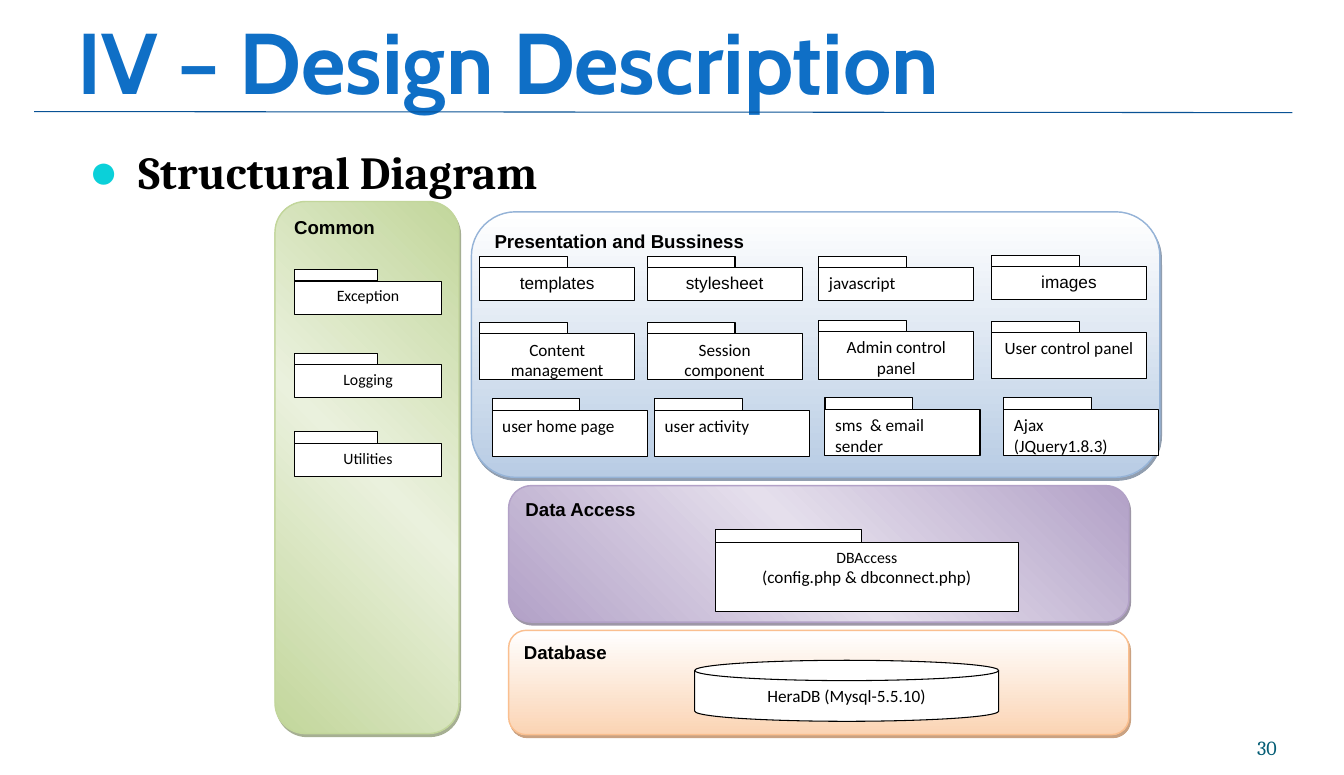
from pptx import Presentation
from pptx import util as u
from pptx.dml.color import RGBColor
from pptx.enum import shapes, text
from pptx.oxml import parse_xml
from pptx.oxml.ns import qn, nsdecls

PX = 9144
HUES = {
    "white": "FFFFFF", "black": "000000", "title": "0F6FC6", "rule": "095295",
    "dot": "0BD0D9", "page": "045D75",
}
SKINS = {
    "base": {"stops": ["FFFFFF", "FBD4B4"], "angle": 270, "edge": "FABF8F", "shade": "974706"},
    "data": {"stops": ["B2A1C7", "E5DFEC", "B2A1C7"], "angle": 45, "edge": "B2A1C7", "shade": "3F3151"},
    "common": {"stops": ["C2D69B", "EAF1DD", "C2D69B"], "angle": 45, "edge": "C2D69B", "shade": "4E6128"},
    "front": {"stops": ["FFFFFF", "B8CCE4"], "angle": 270, "edge": "95B3D7", "shade": "243F60"},
}
KINDS = shapes.MSO_SHAPE
LEFT, MID, RIGHT = text.PP_ALIGN.LEFT, text.PP_ALIGN.CENTER, text.PP_ALIGN.RIGHT
TOP, LOW = text.MSO_ANCHOR.TOP, text.MSO_ANCHOR.BOTTOM


def rgb(code):
    """Turn a hex string into a colour."""
    return RGBColor.from_string(code)


def apply(item, look):
    """Set each attribute in a dict of format values."""
    for key, value in look.items():
        setattr(item, key, value)


def write(shape, lines, font, size, hue="black", bold=False, align=LEFT, anchor=TOP, pads=(10, 5, 10, 5)):
    """Fill a shape with lines of text; a line is a string or a (string, size) pair."""
    frame = shape.text_frame
    sides = ("margin_left", "margin_top", "margin_right", "margin_bottom")
    apply(frame, {"word_wrap": True, "vertical_anchor": anchor,
                  **{side: pad * PX for side, pad in zip(sides, pads)}})
    for i, line in enumerate(lines):
        words, points = line if isinstance(line, tuple) else (line, size)
        para = frame.add_paragraph() if i else frame.paragraphs[0]
        para.alignment = align
        run = para.add_run()
        run.text = words
        apply(run.font, {"name": font, "size": u.Pt(points), "bold": bold})
        run.font.color.rgb = rgb(HUES[hue])
    return frame


def label(slide, box, lines, *style, **look):
    """Add a text box."""
    return write(slide.shapes.add_textbox(*(n * PX for n in box)), lines, *style, **look)


def block(slide, kind, box, edge="000000", width=0.75):
    """Add a white shape with a thin outline."""
    shape = slide.shapes.add_shape(kind, *(n * PX for n in box))
    shape.shadow.inherit = False
    shape.fill.solid()
    shape.fill.fore_color.rgb = rgb(HUES["white"])
    shape.line.color.rgb = rgb(edge)
    shape.line.width = u.Pt(width)
    return shape


def panel(slide, box, name, skin):
    """Add a rounded, shaded panel with its heading."""
    look = SKINS[skin]
    shape = block(slide, KINDS.ROUNDED_RECTANGLE, box, look["edge"], 1)
    shape.adjustments[0] = 0.167
    shape.fill.gradient()
    shape.fill.gradient_angle = look["angle"]
    props = shape._element.spPr
    stops = props.find(qn("a:gradFill")).find(qn("a:gsLst"))
    for old in list(stops):
        stops.remove(old)
    step = 100000 // (len(look["stops"]) - 1)
    for i, code in enumerate(look["stops"]):
        stops.append(parse_xml(f'<a:gs {nsdecls("a")} pos="{i * step}"><a:srgbClr val="{code}"/></a:gs>'))
    props.find(qn("a:effectLst")).append(parse_xml(
        f'<a:outerShdw {nsdecls("a")} blurRad="0" dist="{u.Pt(2.2)}" dir="{63 * 60000}" algn="ctr" rotWithShape="0">'
        f'<a:srgbClr val="{look["shade"]}"><a:alpha val="50000"/></a:srgbClr></a:outerShdw>'))
    write(shape, [name], "Arial", 13, bold=True)


def folder(slide, box, tab, lines, size=12, font="Calibri", align=MID):
    """Add a package: a body under a small tab of the given width and height."""
    x, y, w, h = box
    wide, high = tab
    body = block(slide, KINDS.RECTANGLE, (x, y + high, w, h - high))
    write(body, lines, font, size, align=align)
    block(slide, KINDS.RECTANGLE, (x, y, wide, high))


def head(slide, box):
    """Add the title, the rule and the bullet heading."""
    x, y, w, h = box
    frame = label(slide, (x, y, w, h), ["IV – Design Description"], "Cabin", 60, "title",
                  bold=True, anchor=LOW, pads=(0, 6, 0, 0))
    props = frame.paragraphs[0].runs[0].font._element
    props.insert(0, parse_xml(f'<a:ln {nsdecls("a")} w="{u.Pt(1.45)}"><a:solidFill>'
                              f'<a:srgbClr val="{HUES["white"]}"/></a:solidFill></a:ln>'))
    rule = slide.shapes.add_connector(shapes.MSO_CONNECTOR.STRAIGHT, *(
        n * PX for n in (x - 42, y + h, x + w + 5, y + h + 1)))
    rule.line.color.rgb = rgb(HUES["rule"])
    rule.line.width = u.Pt(0.75)
    rule._element.spPr.append(parse_xml(f'<a:effectLst {nsdecls("a")}/>'))
    frame = label(slide, (x, y + 150, w, 60), ["Structural Diagram"], "Cambria", 32,
                  bold=True, pads=(11, 6, 11, 6))
    props = frame.paragraphs[0]._p.get_or_add_pPr()
    apply_indent = {"marL": 48 * PX, "indent": -48 * PX}
    for key, value in apply_indent.items():
        props.set(key, str(value))
    for tag in (f'buClr {nsdecls("a")}><a:srgbClr val="{HUES["dot"]}"/></a:buClr>',
                f'buSzPct {nsdecls("a")} val="107000"/>',
                f'buFont {nsdecls("a")} typeface="Arial"/>',
                f'buChar {nsdecls("a")} char="●"/>'):
        props.append(parse_xml("<a:" + tag))


def base(slide, box):
    """Add the database panel with its disk."""
    x, y, w, h = box
    panel(slide, box, "Database", "base")
    disk = block(slide, KINDS.FLOWCHART_MAGNETIC_DISK, (x + 180, y + 29, 294, 59))
    write(disk, ["HeraDB (Mysql-5.5.10)"], "Calibri", 12, align=MID)


def data(slide, box):
    """Add the data access panel."""
    x, y, w, h = box
    panel(slide, box, "Data Access", "data")
    folder(slide, (x + 200, y + 42, 293, 80), (141, 13),
           [("DBAccess", 11), "(config.php & dbconnect.php)"])


def common(slide, box):
    """Add the common panel with its column of packages."""
    x, y, w, h = box
    panel(slide, box, "Common", "common")
    for name, top in (("Exception", 66), ("Logging", 147), ("Utilities", 223)):
        folder(slide, (x + 19, y + top, 142, 43), (80, 11), [name], 11)


def front(slide, box):
    """Add the presentation panel with its three rows of packages."""
    x, y, w, h = box
    panel(slide, box, "Presentation and Bussiness", "front")
    plain, script = {"font": "Arial"}, {"align": LEFT}
    cards = [
        (8, 43, 43, ["templates"], plain), (170, 43, 43, ["stylesheet"], plain),
        (336, 43, 43, ["javascript"], script), (503, 42, 43, ["images"], plain),
        (8, 107, 55, ["Content management"], {}), (170, 107, 55, ["Session component"], {}),
        (336, 105, 57, ["Admin control panel"], {}), (503, 106, 55, ["User control panel"], {}),
        (20, 181, 56, ["user home page"], script), (177, 181, 56, ["user activity"], script),
        (342, 180, 56, ["sms  & email sender"], script),
        (515, 180, 56, ["Ajax", "(JQuery1.8.3)"], script),
    ]
    for left, top, high, lines, look in cards:
        folder(slide, (x + left, y + top, 150, high), (85, 11), lines, **look)


def main():
    """Build the slide and save it."""
    deck = Presentation()
    apply(deck, {"slide_width": 1300 * PX, "slide_height": 750 * PX})
    slide = deck.slides.add_slide(deck.slide_layouts[6])
    head(slide, (75, -17, 1170, 125))
    label(slide, (1127, 695, 108, 40), ["30"], "Cambria", 14, "page",
          align=RIGHT, anchor=LOW, pads=(0, 0, 0, 0))
    base(slide, (492, 610, 600, 101))
    data(slide, (492, 470, 600, 132))
    common(slide, (266, 195, 178, 515))
    front(slide, (456, 205, 666, 257))
    deck.save("out.pptx")


if __name__ == "__main__":
    main()
